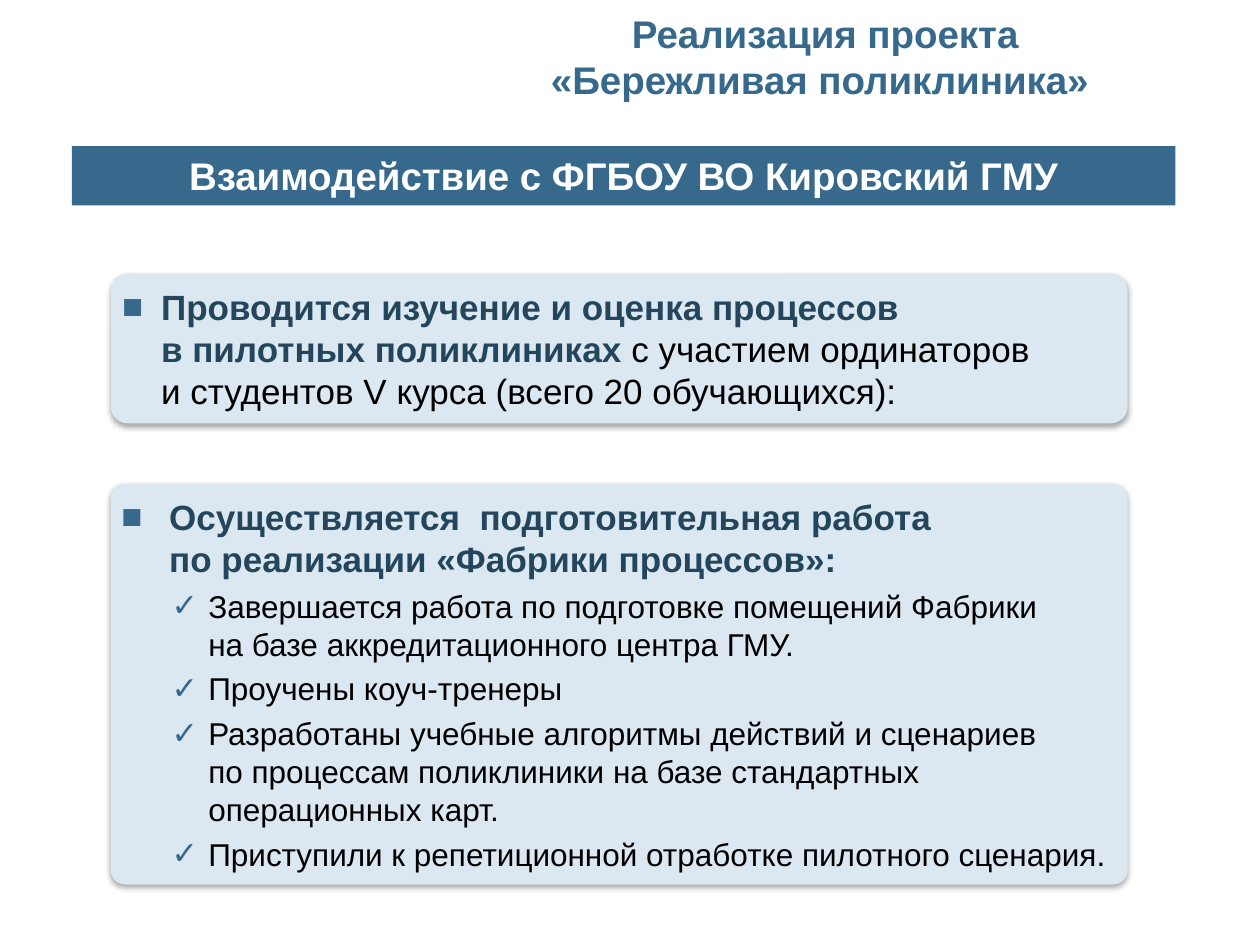
from lxml import etree
from pptx import Presentation
from pptx.dml.color import RGBColor
from pptx.enum import shapes, text
from pptx.oxml import ns
from pptx.util import Inches, Pt

BLUE, NAVY, PALE = "36698C", "24465D", "DBE8F1"
WHITE, BLACK = "FFFFFF", "000000"


def paint(color, value):
    color.rgb = RGBColor.from_string(value)


def node(parent, tag, **attrs):
    return etree.SubElement(parent, ns.qn("a:" + tag), attrs)


def style(font, size, color, bold=False):
    font.name, font.size, font.bold = "Arial", Pt(size), bold
    paint(font.color, color)


def shade(shape):
    """Soft shadow just below the shape."""
    effects = node(shape._element.spPr, "effectLst")
    outer = node(effects, "outerShdw", blurRad=str(Pt(3)), dist=str(Pt(1.8)),
                 dir="5400000", algn="t", rotWithShape="0")
    node(node(outer, "srgbClr", val=BLACK), "alpha", val="35000")


def block(slide, kind, box, fill):
    shape = slide.shapes.add_shape(kind, *map(Inches, box))
    shape.fill.solid()
    paint(shape.fill.fore_color, fill)
    shape.line.fill.background()
    return shape


def setup(shape, anchor=text.MSO_ANCHOR.TOP):
    frame = shape.text_frame
    frame.word_wrap = True
    frame.vertical_anchor = anchor
    frame.auto_size = text.MSO_AUTO_SIZE.SHAPE_TO_FIT_TEXT
    return frame


def head(shape, words, color):
    """Centred bold heading."""
    para = setup(shape).paragraphs[0]
    para.text = words
    para.alignment = text.PP_ALIGN.CENTER
    style(para.font, 22, color, True)


def panel(slide, top, height, adj):
    shape = block(slide, shapes.MSO_SHAPE.ROUNDED_RECTANGLE,
                  (0.88, top, 8.07, height), PALE)
    shape.adjustments[0] = adj
    shape.shadow.inherit = True
    shade(shape)
    frame = setup(shape, text.MSO_ANCHOR.MIDDLE)
    frame.margin_left = frame.margin_right = Inches(0.05)
    frame.margin_top = frame.margin_bottom = Inches(0.05)
    return frame


def bullet(para, mark, left, hang):
    para.alignment = text.PP_ALIGN.LEFT
    props = para._p.get_or_add_pPr()
    props.set("marL", str(Inches(left)))
    props.set("indent", str(-Inches(hang)))
    node(node(props, "buClr"), "srgbClr", val=BLUE)
    node(props, "buFont", typeface="Arial")
    node(props, "buChar", char=mark)


def main():
    prs = Presentation()
    prs.slide_width, prs.slide_height = Inches(10), Inches(7.5)
    slide = prs.slides.add_slide(prs.slide_layouts[6])

    # Study of the processes
    para = panel(slide, 2.17, 1.19, 0.112).paragraphs[0]
    para.text = "Проводится изучение и оценка процессов\vв пилотных поликлиниках "
    bullet(para, "■", 0.31, 0.31)
    for run in para.runs:
        style(run.font, 20, NAVY, True)
    for i, line in enumerate(("с участием ординаторов",
                              "и студентов V курса (всего 20 обучающихся):")):
        if i:
            para.add_line_break()
        run = para.add_run()
        run.text = line
        style(run.font, 20, BLACK)

    # Banner
    banner = block(slide, shapes.MSO_SHAPE.RECTANGLE, (0.57, 1.16, 8.76, 0.47), BLUE)
    banner.shadow.inherit = False
    head(banner, "Взаимодействие с ФГБОУ ВО Кировский ГМУ", WHITE)

    # Title
    title = slide.shapes.add_textbox(*map(Inches, (3.1, 0.03, 6.9, 0.84)))
    head(title, "Реализация проекта\v«Бережливая поликлиника» ", BLUE)

    # Preparation of the factory
    frame = panel(slide, 3.84, 3.18, 0.036)
    para = frame.paragraphs[0]
    para.text = ("Осуществляется  подготовительная работа\v"
                 "по реализации «Фабрики процессов»:")
    bullet(para, "■", 0.38, 0.38)
    style(para.font, 20, NAVY, True)
    for item in (
        "Завершается работа по подготовке помещений Фабрики\v"
        "на базе аккредитационного центра ГМУ.",
        "Проучены коуч-тренеры",
        "Разработаны учебные алгоритмы действий и сценариев\v"
        "по процессам поликлиники на базе стандартных операционных карт.",
        "Приступили к репетиционной отработке пилотного сценария.",
    ):
        para = frame.add_paragraph()
        para.text = item
        para.space_before = Pt(4)
        bullet(para, "✓", 0.69, 0.29)
        style(para.font, 18, BLACK)

    prs.save("out.pptx")


if __name__ == "__main__":
    main()
